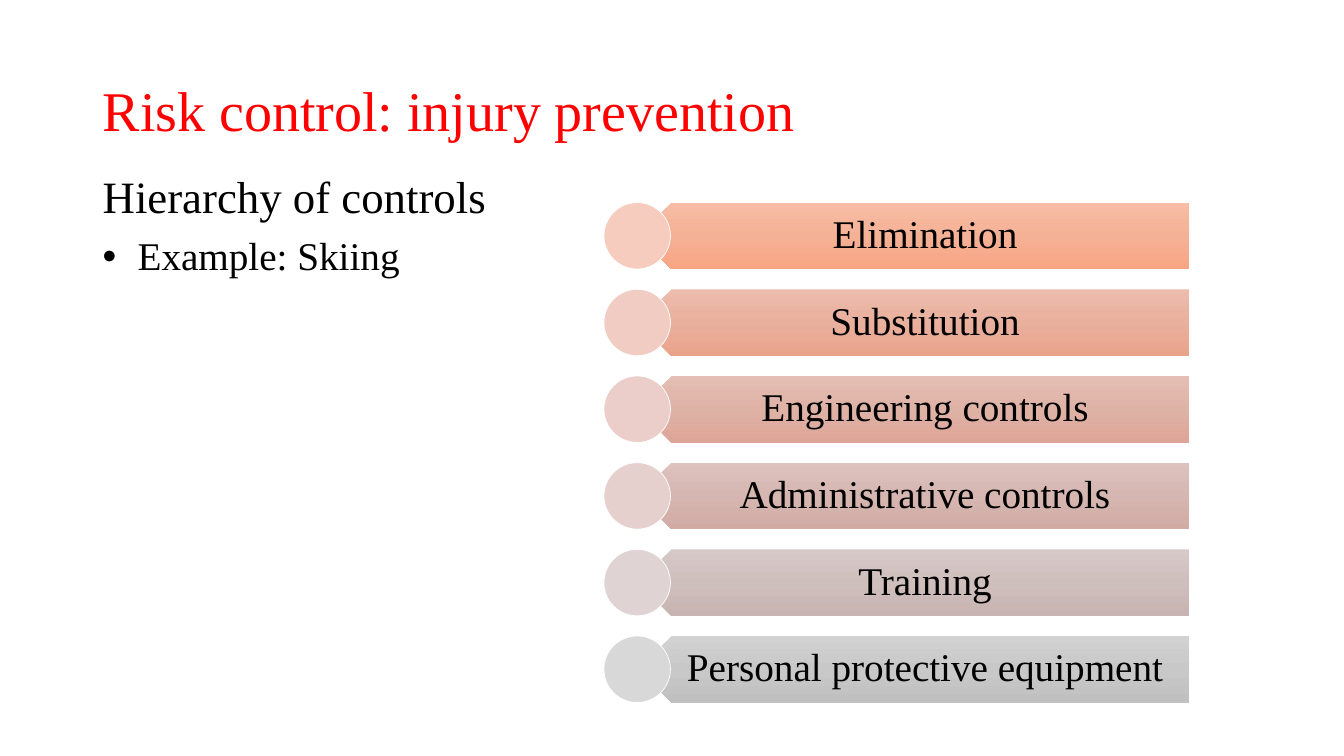
from typing import Any, NamedTuple

import pptx
import pptx.dml.color
import pptx.enum.shapes
import pptx.enum.text
import pptx.oxml
import pptx.oxml.ns
import pptx.util

EMU_PER_PX = 9144  # 100 px to the inch
FONT = "Times New Roman"
BLACK, RED, WHITE = "000000", "FF0000", "FFFFFF"
ALIGN = pptx.enum.text.PP_ALIGN
ANCHOR = pptx.enum.text.MSO_ANCHOR
SHAPE = pptx.enum.shapes.MSO_SHAPE

ROW_TOP, ROW_PITCH, ROW_HEIGHT = 201, 86, 66
CIRCLE_LEFT = 599
BAR_LEFT, BAR_WIDTH = 633, 546
LABEL_LEFT, LABEL_WIDTH = 649, 530


class Control(NamedTuple):
    label: str
    gradient: tuple[str, str, str]
    circle: str


CONTROLS = [
    Control("Elimination", ("F7BDA5", "F5B196", "F8A582"), "F6CCBE"),
    Control("Substitution", ("EDBCAC", "E9B09D", "EAA38B"), "F0CCC3"),
    Control("Engineering controls", ("E4BEB4", "DFB2A6", "DDA597"), "EBCDC9"),
    Control("Administrative controls", ("DDC2BE", "D6B6B1", "D2ABA4"), "E5D0CE"),
    Control("Training", ("D7C9C8", "CEBEBC", "C8B4B2"), "DFD4D3"),
    Control("Personal protective equipment", ("D2D2D2", "C8C8C8", "C0C0C0"), "D8D8D8"),
]


def px(length: int) -> pptx.util.Emu:
    return pptx.util.Emu(length * EMU_PER_PX)


def box(left: int, top: int, width: int, height: int) -> tuple[pptx.util.Emu, ...]:
    return px(left), px(top), px(width), px(height)


def color(value: str) -> pptx.dml.color.RGBColor:
    return pptx.dml.color.RGBColor.from_string(value)


def apply_format(target: Any, values: dict[str, Any]) -> None:
    for name, value in values.items():
        setattr(target, name, value)


def write(paragraph: Any, text: str, size: int, ink: str = BLACK, **values: Any) -> None:
    apply_format(paragraph, {"line_spacing": 0.9, "alignment": ALIGN.LEFT, **values})
    run = paragraph.add_run()
    run.text = text
    apply_format(run.font, {"name": FONT, "size": pptx.util.Pt(size)})
    run.font.color.rgb = color(ink)


def add_bullet(paragraph: Any, indent: int) -> None:
    properties = paragraph._p.get_or_add_pPr()
    properties.set("marL", str(px(indent)))
    properties.set("indent", str(px(-indent)))
    for tag, name, value in (("a:buFont", "typeface", "Arial"), ("a:buChar", "char", "•")):
        element = pptx.oxml.parse_xml(f'<{tag} {pptx.oxml.ns.nsdecls("a")} {name}="{value}"/>')
        properties.append(element)


def fill_downwards(shape: Any, colors: tuple[str, ...]) -> None:
    """Fill with evenly spaced stops from top to bottom, whatever the rotation."""
    step = 100000 // (len(colors) - 1)
    stops = "".join(
        f'<a:gs pos="{index * step}"><a:srgbClr val="{value}"/></a:gs>'
        for index, value in enumerate(colors)
    )
    gradient = pptx.oxml.parse_xml(
        f'<a:gradFill {pptx.oxml.ns.nsdecls("a")} rotWithShape="0">'
        f'<a:gsLst>{stops}</a:gsLst><a:lin ang="5400000" scaled="0"/></a:gradFill>'
    )
    shape._element.spPr.find(pptx.oxml.ns.qn("a:prstGeom")).addnext(gradient)


def add_control(shapes: Any, control: Control, top: int) -> None:
    bar = shapes.add_shape(SHAPE.PENTAGON, *box(BAR_LEFT, top, BAR_WIDTH, ROW_HEIGHT))
    bar.rotation = 180
    bar.shadow.inherit = False
    bar.line.fill.background()
    fill_downwards(bar, control.gradient)

    label = shapes.add_textbox(*box(LABEL_LEFT, top, LABEL_WIDTH, ROW_HEIGHT))
    apply_format(label.text_frame, {
        "word_wrap": True,
        "vertical_anchor": ANCHOR.MIDDLE,
        "margin_left": px(29),
        "margin_right": px(22),
        "margin_top": px(12),
        "margin_bottom": px(12),
    })
    write(label.text_frame.paragraphs[0], control.label, 28, alignment=ALIGN.CENTER)

    circle = shapes.add_shape(SHAPE.OVAL, *box(CIRCLE_LEFT, top, ROW_HEIGHT, ROW_HEIGHT))
    circle.shadow.inherit = False
    circle.fill.solid()
    circle.fill.fore_color.rgb = color(control.circle)
    circle.line.color.rgb = color(WHITE)
    circle.line.width = pptx.util.Pt(0.5)


def add_title(slide: Any) -> None:
    title = slide.shapes.title
    position = zip(("left", "top", "width", "height"), box(92, 40, 1150, 145))
    apply_format(title, dict(position))
    title.text_frame.vertical_anchor = ANCHOR.MIDDLE
    write(title.text_frame.paragraphs[0], "Risk control: injury prevention", 40, RED)


def add_body(slide: Any) -> None:
    frame = slide.shapes.add_textbox(*box(92, 168, 1150, 561)).text_frame
    frame.word_wrap = True
    gap = pptx.util.Pt(10)
    write(frame.paragraphs[0], "Hierarchy of controls", 32, space_before=gap)
    example = frame.add_paragraph()
    write(example, " Example: Skiing", 28, space_before=gap)
    add_bullet(example, 25)


def main() -> None:
    presentation = pptx.Presentation()
    apply_format(presentation, {"slide_width": px(1333), "slide_height": px(750)})
    slide = presentation.slides.add_slide(presentation.slide_layouts.get_by_name("Title Only"))
    add_title(slide)
    add_body(slide)
    diagram = slide.shapes.add_group_shape()
    for row, control in enumerate(CONTROLS):
        add_control(diagram.shapes, control, ROW_TOP + row * ROW_PITCH)
    presentation.save("out.pptx")


if __name__ == "__main__":
    main()
